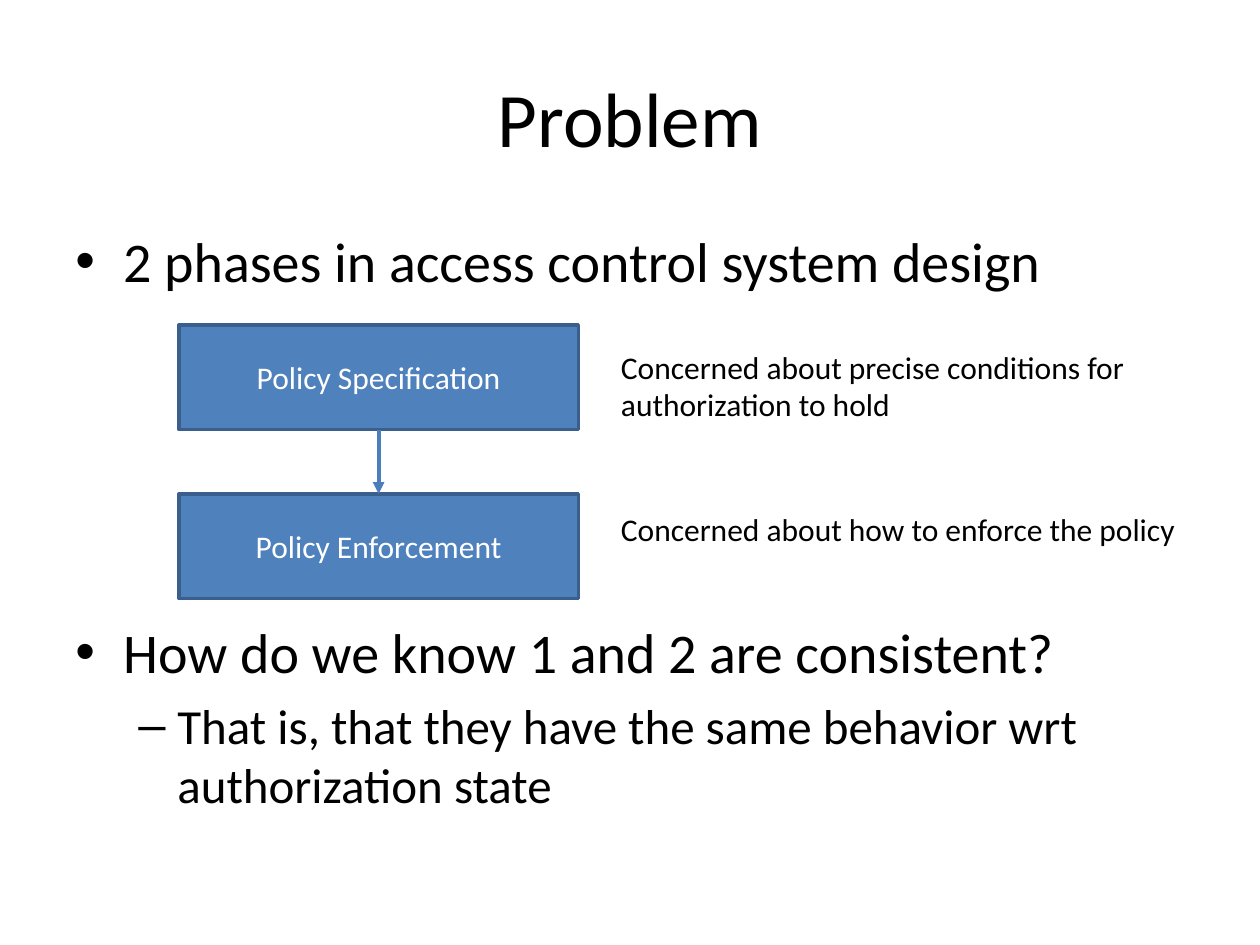
from pptx import Presentation
from pptx.dml.color import RGBColor
from pptx.enum.shapes import MSO_CONNECTOR as Connector, MSO_SHAPE as Shape
from pptx.enum.text import MSO_ANCHOR as Anchor, PP_ALIGN as Align
from pptx.oxml.ns import qn
from pptx.util import Pt
from lxml.etree import SubElement

EMU_PER_PX = 9144  # 100 px to the inch
FONT = "Calibri"
BLACK, WHITE = "000000", "FFFFFF"
BLUE, DARK_BLUE, ARROW_BLUE = "4F81BD", "3A5F8C", "4B7EBC"

PHASE_LEFT, PHASE_WIDTH, PHASE_HEIGHT = 142, 317, 83
NOTE_LEFT = 433
PHASES = [  # name, top, note, note top, note width, note height
    ("Policy Specification", 258,
     "Concerned about precise conditions for authorization to hold", 271, 500, 71),
    ("Policy Enforcement", 392,
     "Concerned about how to enforce the policy", 400, 533, 40),
]
BULLETS = [  # text, size, level, sign, margin, hanging, space before
    ("2 phases in access control system design", 32, 0, "•", 38, 38, 0),
    ("How do we know 1 and 2 are consistent?", 32, 0, "•", 38, 38, 185),
    ("That is, that they have the same behavior wrt authorization state",
     28, 1, "–", 81, 31, 6),
]


def px(*lengths):
    return [length * EMU_PER_PX for length in lengths]


def color(hex_code):
    return RGBColor.from_string(hex_code)


def assign(target, values):
    for name, value in values.items():
        setattr(target, name, value)


def write(para, text, size, ink=BLACK, **layout):
    assign(para, layout)
    span = para.add_run()
    span.text = text
    assign(span.font, {"name": FONT, "size": Pt(size)})
    span.font.color.rgb = color(ink)


def indent(para, margin, hanging=0):
    props = para._p.get_or_add_pPr()
    for name, length in zip(("marL", "indent"), px(margin, -hanging)):
        props.set(name, str(length))
    return props


def add_text_box(page, *bounds):
    frame = page.shapes.add_textbox(*px(*bounds)).text_frame
    frame.word_wrap = True
    return frame


def set_title(page, text):
    title = page.shapes.title
    assign(title, dict(zip(("left", "top", "width", "height"), px(50, 30, 900, 125))))
    title.text_frame.vertical_anchor = Anchor.MIDDLE
    write(title.text_frame.paragraphs[0], text, 44, alignment=Align.CENTER)


def add_bullets(page):
    frame = add_text_box(page, 50, 175, 900, 495)
    for i, (text, size, level, sign, margin, hanging, before) in enumerate(BULLETS):
        para = frame.add_paragraph() if i else frame.paragraphs[0]
        write(para, text, size, level=level, space_before=Pt(before))
        props = indent(para, margin, hanging)
        SubElement(props, qn("a:buFont")).set("typeface", "Arial")
        SubElement(props, qn("a:buChar")).set("char", sign)


def add_phase(page, name, top):
    box = page.shapes.add_shape(
        Shape.RECTANGLE, *px(PHASE_LEFT, top, PHASE_WIDTH, PHASE_HEIGHT))
    box.shadow.inherit = False
    box.fill.solid()
    box.fill.fore_color.rgb = color(BLUE)
    box.line.color.rgb = color(DARK_BLUE)
    box.line.width = Pt(2)
    box.text_frame.vertical_anchor = Anchor.MIDDLE
    write(box.text_frame.paragraphs[0], name, 18, WHITE, alignment=Align.CENTER)
    return box


def add_note(page, text, top, width, height):
    para = add_text_box(page, NOTE_LEFT, top, width, height).paragraphs[0]
    write(para, text, 18, level=1)
    indent(para, 50)


def add_arrow(page, upper, lower):
    arrow = page.shapes.add_connector(Connector.STRAIGHT, 0, 0, 0, 0)
    arrow.begin_connect(upper, 2)
    arrow.end_connect(lower, 0)
    arrow.line.color.rgb = color(ARROW_BLUE)
    arrow.line.width = Pt(2.25)
    SubElement(arrow.line._get_or_add_ln(), qn("a:tailEnd")).set("type", "triangle")
    SubElement(arrow._element.spPr, qn("a:effectLst"))


def main():
    deck = Presentation()
    deck.slide_width, deck.slide_height = px(1000, 750)
    page = deck.slides.add_slide(deck.slide_layouts[5])
    set_title(page, "Problem")
    add_bullets(page)
    boxes = [add_phase(page, name, top) for name, top, *_ in PHASES]
    add_arrow(page, *boxes)
    for _, _, *note in PHASES:
        add_note(page, *note)
    deck.save("out.pptx")


if __name__ == "__main__":
    main()
